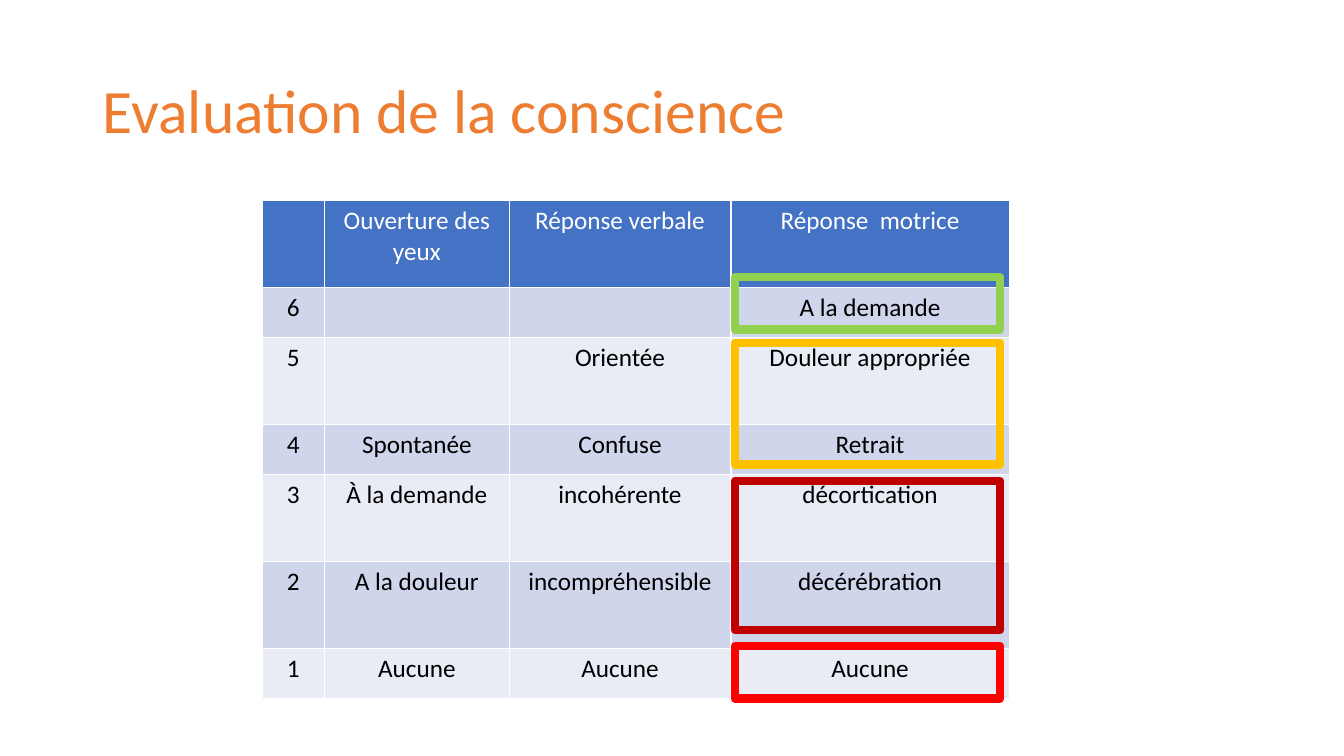
from pptx import Presentation
from pptx.dml.color import RGBColor
from pptx.enum.shapes import MSO_SHAPE
from pptx.enum.text import MSO_ANCHOR, PP_ALIGN
from pptx.util import Inches, Pt

RECT = MSO_SHAPE.RECTANGLE
MIDDLE = MSO_ANCHOR.MIDDLE
LEFT, CENTER = PP_ALIGN.LEFT, PP_ALIGN.CENTER

ORANGE = RGBColor(0xED, 0x7D, 0x31)
BLUE = RGBColor(0x44, 0x72, 0xC4)
BANDS = RGBColor(0xCF, 0xD5, 0xEA), RGBColor(0xE9, 0xEB, 0xF5)
WHITE = RGBColor(0xFF, 0xFF, 0xFF)
BLACK = RGBColor(0, 0, 0)
GREEN = RGBColor(0x92, 0xD0, 0x50)
AMBER = RGBColor(0xFF, 0xC0, 0x00)
MAROON = RGBColor(0xC0, 0x00, 0x00)
RED = RGBColor(0xFF, 0x00, 0x00)

FONT = "Calibri"
COLS = [0.62, 1.83, 2.2, 2.76]
TALL, SHORT = 0.86, 0.5
ROWS = [
    (TALL, ["", "Ouverture des yeux", "Réponse verbale", "Réponse  motrice"]),
    (SHORT, ["6", "", "", "A la demande"]),
    (TALL, ["5", "", "Orientée", "Douleur appropriée"]),
    (SHORT, ["4", "Spontanée", "Confuse", "Retrait"]),
    (TALL, ["3", "À la demande", "incohérente", "décortication"]),
    (TALL, ["2", "A la douleur", "incompréhensible", "décérébration"]),
    (SHORT, ["1", "Aucune", "Aucune", "Aucune"]),
]
# Top below the table's top edge, height, colour
MARKS = [
    (1.41, 1.21, AMBER),
    (2.78, 1.48, MAROON),
    (0.76, 0.52, GREEN),
    (4.42, 0.52, RED),
]


def write(frame, text, size=18, color=BLACK, align=CENTER, spacing=1.0):
    para = frame.paragraphs[0]
    para.alignment = align
    para.line_spacing = spacing
    run = para.add_run()
    run.text = text
    font = run.font
    font.name, font.size, font.bold = FONT, Pt(size), False
    font.color.rgb = color


def add_title(slide, left, top, width, height):
    title = slide.shapes.title
    title.left, title.top = Inches(left), Inches(top)
    title.width, title.height = Inches(width), Inches(height)
    title.text_frame.vertical_anchor = MIDDLE
    write(title.text_frame, "Evaluation de la conscience",
          size=44, color=ORANGE, align=LEFT, spacing=0.9)


def add_scale(slide, left, top):
    height = sum(tall for tall, _ in ROWS)
    table = slide.shapes.add_table(
        len(ROWS), len(COLS), Inches(left), Inches(top),
        Inches(sum(COLS)), Inches(height)).table
    for col, width in zip(table.columns, COLS):
        col.width = Inches(width)
    for i, (tall, texts) in enumerate(ROWS):
        table.rows[i].height = Inches(tall)
        for j, text in enumerate(texts):
            cell = table.cell(i, j)
            cell.fill.solid()
            cell.fill.fore_color.rgb = BANDS[(i - 1) % 2] if i else BLUE
            if text:
                write(cell.text_frame, text, color=BLACK if i else WHITE)


def add_marks(slide, left, top):
    """Frame the groups of motor responses, from the table's corner."""
    start = left + sum(COLS[:3]) + 0.04
    for drop, height, color in MARKS:
        mark = slide.shapes.add_shape(
            RECT, Inches(start), Inches(top + drop),
            Inches(2.63), Inches(height))
        mark.shadow.inherit = False
        mark.fill.background()
        mark.line.color.rgb = color
        mark.line.width = Pt(6)


def main():
    deck = Presentation()
    deck.slide_width, deck.slide_height = Inches(13.33), Inches(7.5)
    slide = deck.slides.add_slide(deck.slide_layouts[5])
    add_title(slide, 0.92, 0.4, 11.5, 1.45)
    add_scale(slide, 2.6, 1.99)
    add_marks(slide, 2.6, 1.99)
    deck.save("out.pptx")


if __name__ == "__main__":
    main()
